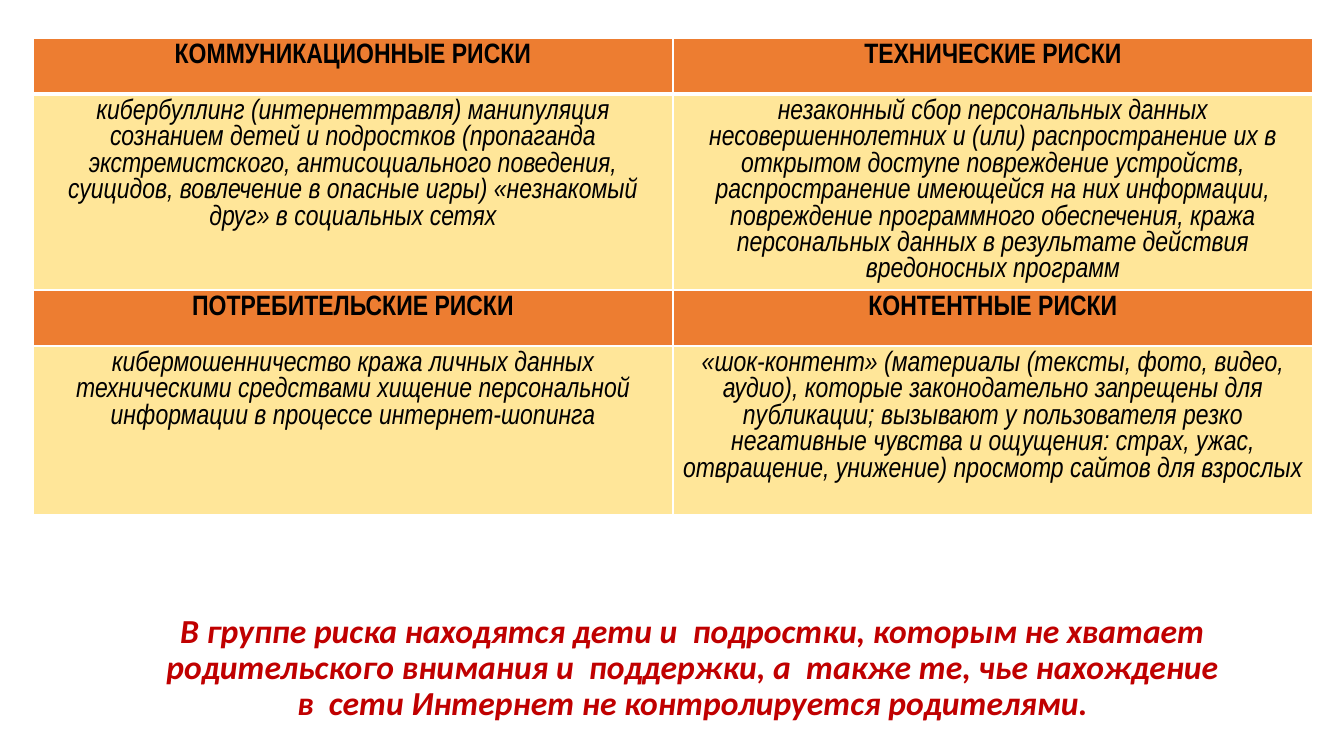
from lxml import etree
from pptx import Presentation
from pptx.dml.color import RGBColor
from pptx.enum.text import PP_ALIGN
from pptx.oxml.ns import qn
from pptx.util import Emu, Pt

CENTER = PP_ALIGN.CENTER

RISKS = [
    ("КОММУНИКАЦИОННЫЕ РИСКИ", "ТЕХНИЧЕСКИЕ РИСКИ"),
    (
        "кибербуллинг (интернеттравля) манипуляция сознанием детей и подростков "
        "(пропаганда экстремистского, антисоциального поведения, суицидов, "
        "вовлечение в опасные игры) «незнакомый друг» в социальных сетях",
        "незаконный сбор персональных данных несовершеннолетних и (или) "
        "распространение их в открытом доступе повреждение устройств, "
        "распространение имеющейся на них информации, повреждение программного "
        "обеспечения, кража персональных данных в результате действия "
        "вредоносных программ",
    ),
    ("ПОТРЕБИТЕЛЬСКИЕ РИСКИ", "КОНТЕНТНЫЕ РИСКИ"),
    (
        "кибермошенничество кража личных данных техническими средствами хищение "
        "персональной информации в процессе интернет-шопинга",
        "«шок-контент» (материалы (тексты, фото, видео, аудио), которые "
        "законодательно запрещены для публикации; вызывают у пользователя резко "
        "негативные чувства и ощущения: страх, ужас, отвращение, унижение) "
        "просмотр сайтов для взрослых",
    ),
]
CONCLUSION = (
    "В группе риска находятся дети и  подростки, которым не хватает "
    "родительского внимания и  поддержки, а  также те, чье нахождение "
    "в  сети Интернет не контролируется родителями."
)

SLIDE_SIZE = (1344, 756)
TABLE_LEFT, TABLE_TOP = 33, 38
COLUMN_WIDTH = 640
ROW_HEIGHTS = [56, 196, 56, 169]
CONCLUSION_BOX = (145, 609, 1095, 159)
HEADING_FILL, DETAIL_FILL = "ED7D31", "FFE699"
BLACK, WHITE, RED = "000000", "FFFFFF", "C00000"


def px(length):
    return Emu(length * 914400 * 10 // 1008)


def color(hex_string):
    return RGBColor.from_string(hex_string)


def write(para, text, font_name, size, font_color, bold, italic):
    para.text = text
    para.alignment = CENTER
    font = para.runs[0].font
    font.name, font.size = font_name, Pt(size)
    font.bold, font.italic = bold, italic
    font.color.rgb = color(font_color)


def set_borders(cell, widths):
    """Draw white borders; widths maps each side tag to points, in schema order."""
    properties = cell._tc.get_or_add_tcPr()
    for position, (tag, width) in enumerate(widths.items()):
        line = etree.Element(qn(f"a:{tag}"), w=str(Pt(width)))
        fill = etree.SubElement(line, qn("a:solidFill"))
        etree.SubElement(fill, qn("a:srgbClr"), val=WHITE)
        properties.insert(position, line)


def add_risk_table(slide):
    frame = slide.shapes.add_table(
        len(RISKS), 2, px(TABLE_LEFT), px(TABLE_TOP),
        px(2 * COLUMN_WIDTH), px(sum(ROW_HEIGHTS)),
    )
    table = frame.table
    for column in table.columns:
        column.width = px(COLUMN_WIDTH)
    for row_index, texts in enumerate(RISKS):
        table.rows[row_index].height = px(ROW_HEIGHTS[row_index])
        heading = row_index % 2 == 0
        top = 3 if row_index == 1 else 1
        bottom = 3 if row_index == 0 else 1
        for column_index, text in enumerate(texts):
            cell = table.cell(row_index, column_index)
            cell.fill.solid()
            cell.fill.fore_color.rgb = color(HEADING_FILL if heading else DETAIL_FILL)
            set_borders(cell, {"lnL": 1, "lnR": 1, "lnT": top, "lnB": bottom})
            write(cell.text_frame.paragraphs[0], text, "Arial Narrow", 20, BLACK,
                  bold=heading, italic=not heading)


def add_conclusion(slide):
    box = slide.shapes.add_textbox(*map(px, CONCLUSION_BOX))
    box.text_frame.word_wrap = True
    para = box.text_frame.paragraphs[0]
    write(para, CONCLUSION, "Calibri", 24, RED, bold=True, italic=True)
    para.line_spacing = 0.9


def main():
    deck = Presentation()
    deck.slide_width, deck.slide_height = map(px, SLIDE_SIZE)
    slide = deck.slides.add_slide(deck.slide_layouts[6])
    add_risk_table(slide)
    add_conclusion(slide)
    deck.save("out.pptx")


if __name__ == "__main__":
    main()
